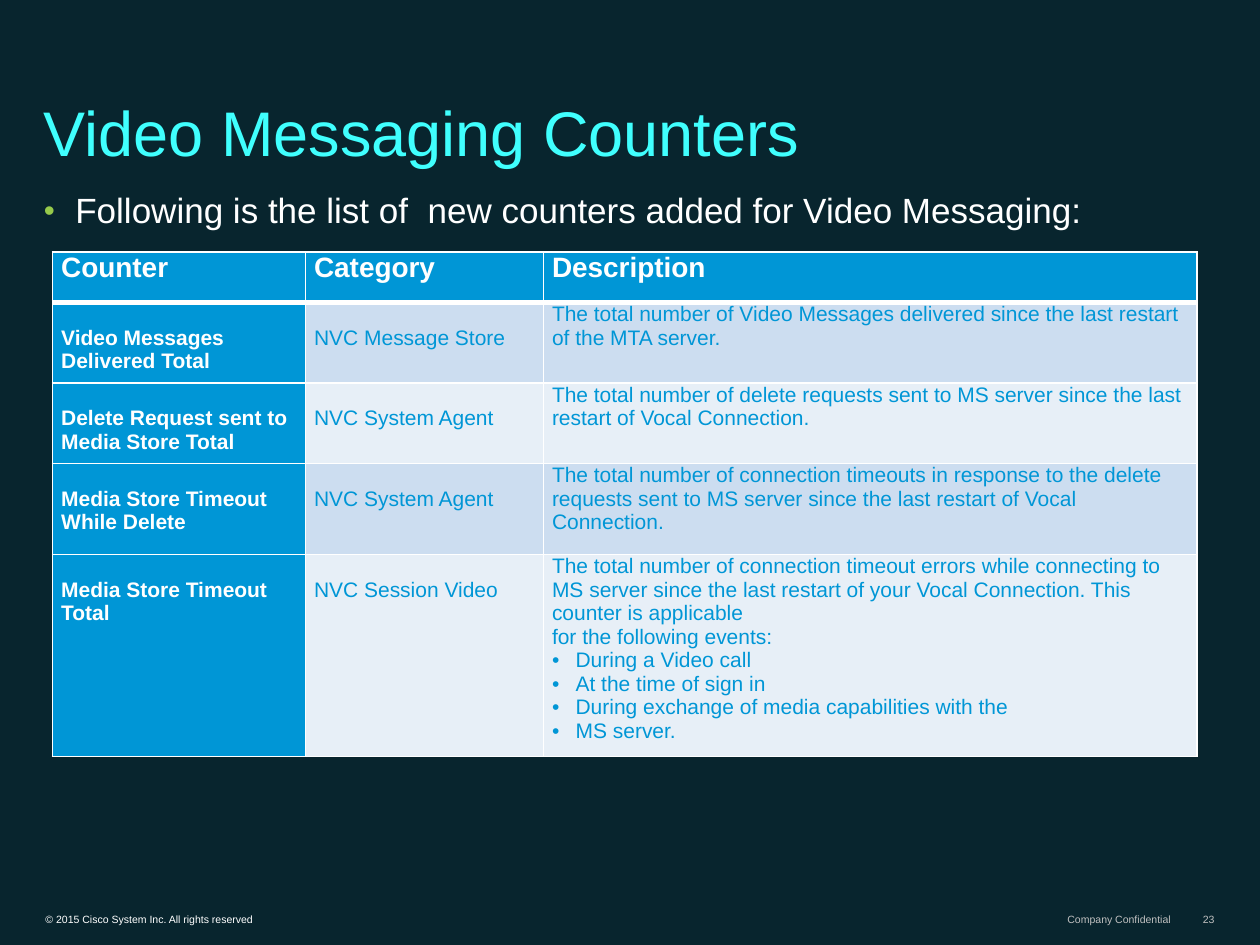
from pptx import Presentation
from pptx.dml.color import RGBColor
from pptx.enum.text import MSO_ANCHOR, PP_ALIGN
from pptx.oxml.ns import qn
from pptx.util import Pt
from lxml.etree import SubElement, Element

COLORS = {
    "background": "08252E", "title": "40FFFE", "white": "FFFFFF",
    "bullet": "96CA4B", "muted": "C0C0C0", "blue": "0096D6",
    "band_dark": "CCDDF0", "band_light": "E7EFF7",
}

FORMATS = {
    "title": {"size": Pt(36), "color": "title"},
    "body": {"size": Pt(20), "color": "white"},
    "header": {"size": Pt(16), "bold": True, "color": "white"},
    "counter": {"size": Pt(12), "bold": True, "color": "white"},
    "cell": {"size": Pt(12), "bold": False, "color": "blue"},
    "copyright": {"size": Pt(6), "color": "white"},
    "footer": {"size": Pt(6), "color": "muted"},
}

COLUMN_WIDTHS = [144.5, 136, 373.5]
ROW_HEIGHTS = [29, 46, 46, 52, 115]
BLANK_LINE = 13.5  # height of one 12 pt line

HEADERS = ["Counter", "Category", "Description"]
# Description lines that start with "•" become bulleted paragraphs
COUNTERS = [
    ("Video Messages Delivered Total", "NVC Message Store",
     ["The total number of Video Messages delivered since the last restart of the MTA server."]),
    ("Delete Request sent to Media Store Total", "NVC System Agent",
     ["The total number of delete requests sent to MS server since the last restart of "
      "Vocal Connection."]),
    ("Media Store Timeout While Delete", "NVC System Agent",
     ["The total number of connection timeouts in response to the delete requests sent to "
      "MS server since the last restart of Vocal Connection."]),
    ("Media Store Timeout Total", "NVC Session Video",
     ["The total number of connection timeout errors while connecting to MS server since the "
      "last restart of your Vocal Connection. This counter is applicable",
      "for the following events:", "•During a Video call", "•At the time of sign in",
      "•During exchange of media capabilities with the", "•MS server."]),
]


def rgb(name):
    return RGBColor.from_string(COLORS[name])


def add_bullet(paragraph, indent, color=None, percent=100):
    properties = paragraph._p.get_or_add_pPr()
    properties.set("marL", str(Pt(indent)))
    properties.set("indent", str(-Pt(indent)))
    if color:
        bullet_color = SubElement(properties, qn("a:buClr"))
        SubElement(bullet_color, qn("a:srgbClr"), val=COLORS[color])
    SubElement(properties, qn("a:buSzPct"), val=str(percent * 1000))
    SubElement(properties, qn("a:buFont"), typeface="Arial")
    SubElement(properties, qn("a:buChar"), char="•")


def write(paragraph, text, style):
    run = paragraph.add_run()
    run.text = text
    run.font.name = "Arial"
    for name, value in FORMATS[style].items():
        if name == "color":
            run.font.color.rgb = rgb(value)
        else:
            setattr(run.font, name, value)


def add_text(slide, box, text, style, **frame_format):
    """Place a one-paragraph text box and return its paragraph."""
    frame = slide.shapes.add_textbox(*map(Pt, box)).text_frame
    frame.word_wrap = True
    for name, value in frame_format.items():
        setattr(frame, name, value)
    paragraph = frame.paragraphs[0]
    write(paragraph, text, style)
    return paragraph


def add_heading(slide, left, top, width):
    # Title
    title = add_text(slide, (left, top, width, 66), "Video Messaging Counters", "title",
                     vertical_anchor=MSO_ANCHOR.BOTTOM)
    title.line_spacing = 0.8
    # Introduction
    introduction = add_text(slide, (left, top + 72, width, 36),
                            "Following is the list of  new counters added for Video Messaging:",
                            "body")
    add_bullet(introduction, 18, "bullet", 90)
    introduction.line_spacing = 0.95


def set_borders(cell, widths):
    properties = cell._tc.get_or_add_tcPr()
    for index, (side, width) in enumerate(widths.items()):
        line = Element(qn(f"a:ln{side}"), w=str(Pt(width)))
        fill = SubElement(line, qn("a:solidFill"))
        SubElement(fill, qn("a:srgbClr"), val=COLORS["white"])
        properties.insert(index, line)


def fill_cell(cell, lines, style, fill, margin_top, borders):
    cell.margin_left = cell.margin_right = Pt(5)
    cell.margin_top, cell.margin_bottom = Pt(margin_top), 0
    cell.fill.solid()
    cell.fill.fore_color.rgb = rgb(fill)
    set_borders(cell, borders)
    frame = cell.text_frame
    for index, line in enumerate(lines):
        paragraph = frame.add_paragraph() if index else frame.paragraphs[0]
        if line.startswith("•"):
            add_bullet(paragraph, 13.5)
        write(paragraph, line.lstrip("•"), style)


def add_counter_table(slide, left, top):
    table = slide.shapes.add_table(
        len(ROW_HEIGHTS), len(COLUMN_WIDTHS), Pt(left), Pt(top),
        Pt(sum(COLUMN_WIDTHS)), Pt(sum(ROW_HEIGHTS))).table
    for column, width in zip(table.columns, COLUMN_WIDTHS):
        column.width = Pt(width)
    for row, height in zip(table.rows, ROW_HEIGHTS):
        row.height = Pt(height)

    # Header row, with a heavy line below
    for column, header in enumerate(HEADERS):
        fill_cell(table.cell(0, column), [header], "header", "blue", 0,
                  {"L": 1, "R": 1, "T": 1, "B": 3})

    # Counter rows, in alternating bands
    for row, (counter, category, description) in enumerate(COUNTERS, start=1):
        band = "band_dark" if row % 2 else "band_light"
        borders = {"L": 1, "R": 1, "T": 3 if row == 1 else 1, "B": 1}
        fill_cell(table.cell(row, 0), [counter], "counter", "blue", BLANK_LINE, borders)
        fill_cell(table.cell(row, 1), [category], "cell", band, BLANK_LINE, borders)
        fill_cell(table.cell(row, 2), description, "cell", band, 0, borders)


def add_footer(slide, left, top, width):
    right = left + width
    parts = [
        (left, 270, "© 2015 Cisco System Inc. All rights reserved", "copyright", PP_ALIGN.LEFT),
        (right - 105, 80, "Company Confidential", "footer", PP_ALIGN.RIGHT),
        (right - 30, 30, "23", "footer", PP_ALIGN.RIGHT),
    ]
    for part_left, part_width, text, style, alignment in parts:
        paragraph = add_text(slide, (part_left, top, part_width, 13.5), text, style,
                             vertical_anchor=MSO_ANCHOR.BOTTOM,
                             margin_left=Pt(6.5), margin_right=Pt(6.5),
                             margin_top=Pt(3), margin_bottom=Pt(3))
        paragraph.alignment = alignment


def main():
    presentation = Presentation()
    presentation.slide_width, presentation.slide_height = Pt(720), Pt(540)
    slide = presentation.slides.add_slide(presentation.slide_layouts[6])
    slide.background.fill.solid()
    slide.background.fill.fore_color.rgb = rgb("background")
    add_heading(slide, 18, 34, 676)
    add_counter_table(slide, 30, 144)
    add_footer(slide, 19.5, 518.5, 681)
    presentation.save("out.pptx")


if __name__ == "__main__":
    main()
